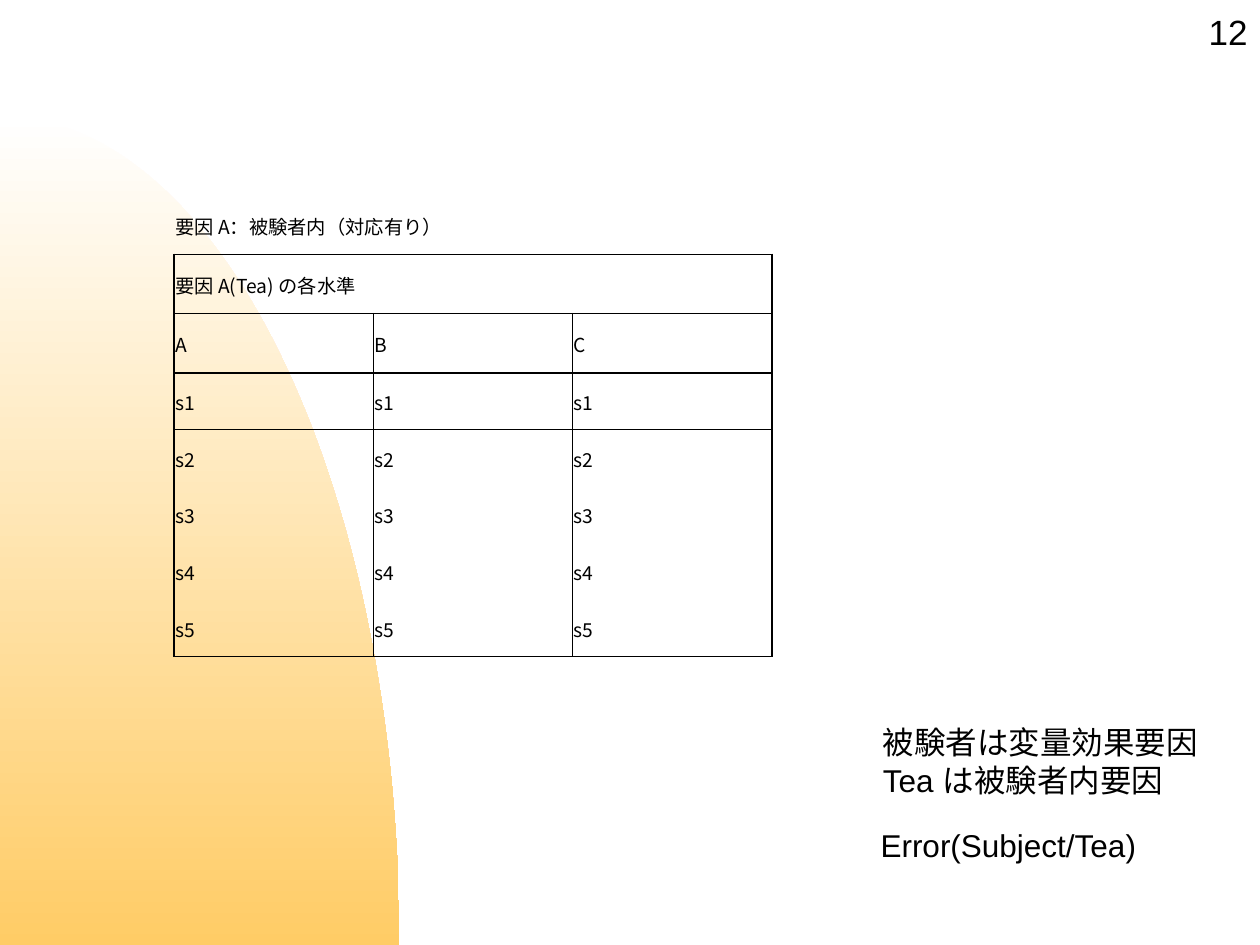
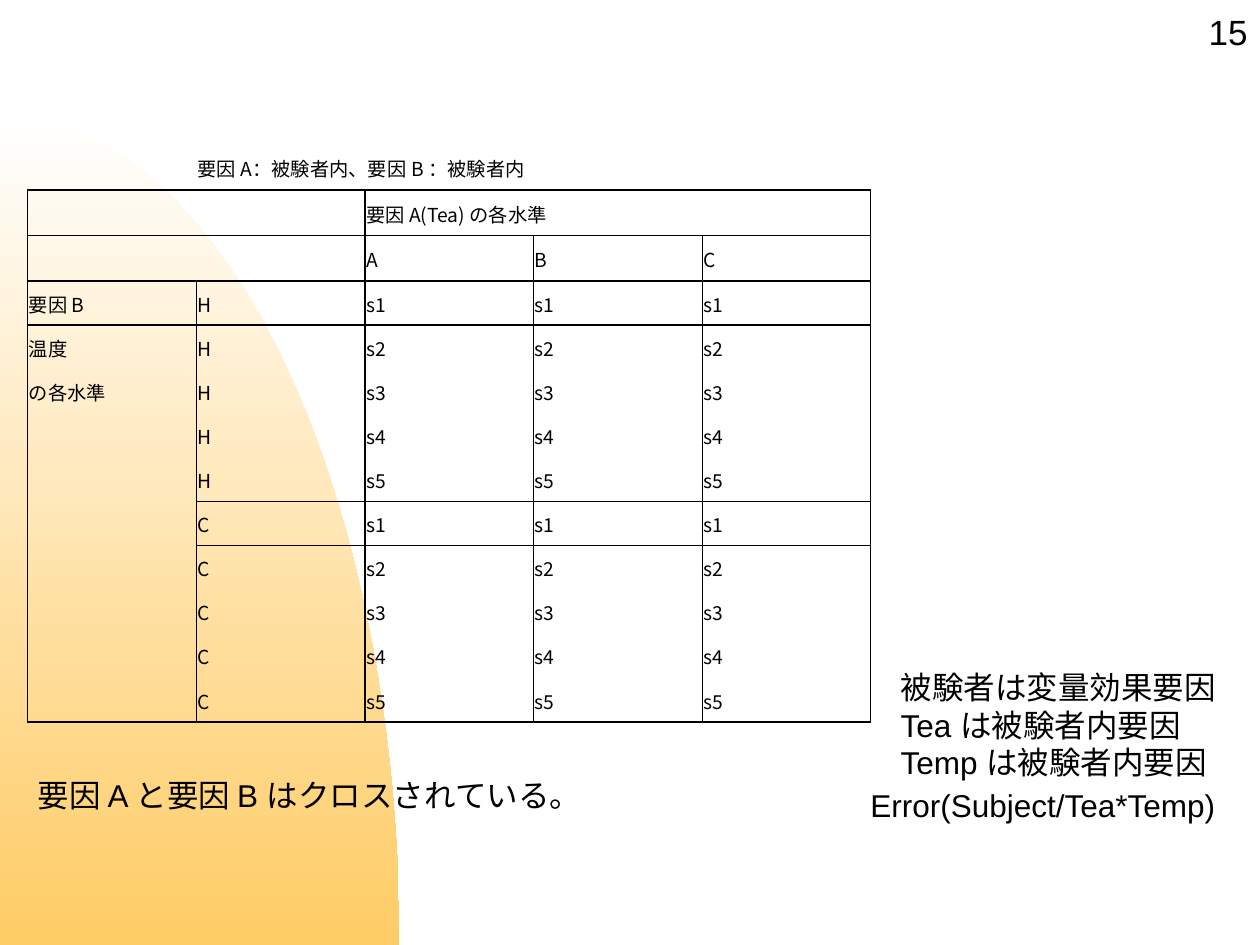
from dataclasses import dataclass
from math import cos, pi, sin

from lxml import etree
from pptx import Presentation
from pptx import util as u
from pptx.dml.color import RGBColor
from pptx.enum import text
from pptx.oxml import ns


@dataclass(frozen=True)
class Theme:
    ink: str = "000000"
    arch_top: str = "FFFFFF"
    arch_bottom: str = "FFCC66"
    font: str = "Arial"
    japanese_font: str = "Noto Sans CJK JP"
    cell_size: float = 11
    note_size: float = 18
    number_size: float = 20
    thin: float = 0.5
    thick: float = 1
    plain_table: str = "{2D5ABB26-0587-4C30-8999-92F81FD0307C}"


THEME = Theme()
COLUMNS, ROWS = 100, 75  # square grid over a 10 x 7.5 inch slide
LEVELS = ["A", "B", "C"]
SUBJECTS = [f"s{number}" for number in range(1, 6)]


def grid(units):
    """Length of a number of grid squares."""
    return u.Inches(units * 10 / COLUMNS)


def format_runs(frame, size, font):
    for para in frame.paragraphs:
        for span in para.runs:
            span.font.size = u.Pt(size)
            span.font.name = font
            span.font.color.rgb = RGBColor.from_string(THEME.ink)
            east_asian = etree.SubElement(span.font._element, ns.qn("a:ea"))
            east_asian.set("typeface", THEME.japanese_font)


# Shared background and page number

def add_arch(deck, page):
    """Draw the quarter ellipse and move it to the master, behind everything."""
    top, width, steps = 9.2, 31.7, 90
    angles = [step * pi / 2 / steps for step in range(steps + 1)]
    curve = [(grid(width * sin(angle)), grid(ROWS - (ROWS - top) * cos(angle)))
             for angle in angles]
    builder = page.shapes.build_freeform(*curve[0])
    builder.add_line_segments(curve[1:] + [(0, grid(ROWS))], close=True)
    arch = builder.convert_to_shape()
    arch.shadow.inherit = False
    arch.line.fill.background()
    arch.fill.gradient()
    arch.fill.gradient_angle = 270
    for stop, color in zip(arch.fill.gradient_stops,
                           (THEME.arch_top, THEME.arch_bottom)):
        stop.color.rgb = RGBColor.from_string(color)
    deck.slide_master.shapes.element.insert(2, arch.element)


def add_note(page, left, top, width, height, words, size=THEME.note_size):
    box = page.shapes.add_textbox(*map(grid, (left, top, width, height)))
    frame = box.text_frame
    frame.word_wrap = False
    frame.text = words
    format_runs(frame, size, THEME.font)
    return frame


def add_page_number(page, number):
    frame = add_note(page, 91.1, 0, 8.9, 5, str(number), THEME.number_size)
    frame.vertical_anchor = text.MSO_ANCHOR.MIDDLE
    frame.paragraphs[0].alignment = text.PP_ALIGN.RIGHT


# Tables

def block_edges(block, width):
    """Border widths around a block of cells: top, left, bottom, right."""
    top, left, bottom, right = block
    edges = {}
    for row in range(top, bottom + 1):
        edges[row, left, "L"] = edges[row, right, "R"] = width
    for column in range(left, right + 1):
        edges[top, column, "T"] = edges[bottom, column, "B"] = width
    return edges


def draw_borders(table, divided, outlined):
    """Thin lines round each column of a block, then thick block outlines."""
    edges = {}
    for top, left, bottom, right in divided:
        for column in range(left, right + 1):
            edges |= block_edges((top, column, bottom, column), THEME.thin)
    for block in outlined:
        edges |= block_edges(block, THEME.thick)

    for row in range(len(table.rows)):
        for column in range(len(table.columns)):
            cell = table.cell(row, column)
            properties = cell._tc.get_or_add_tcPr()
            last = column + cell.span_width - 1 if cell.is_merge_origin else column
            position = 0
            for side in "LRTB":
                width = edges.get((row, last if side == "R" else column, side))
                if width is None:
                    continue
                line = etree.Element(ns.qn(f"a:ln{side}"), w=str(u.Pt(width)))
                fill = etree.SubElement(line, ns.qn("a:solidFill"))
                etree.SubElement(fill, ns.qn("a:srgbClr"), val=THEME.ink)
                properties.insert(position, line)
                position += 1


def add_design_table(page, left, top, column_width, head_height, body_height,
                     rows, spans, divided, outlined):
    """Three heading rows, then body rows; spans are (row, first column)."""
    heights = [head_height] * 3 + [body_height] * (len(rows) - 3)
    count = len(rows[0])
    frame = page.shapes.add_table(len(rows), count, grid(left), grid(top),
                                  grid(column_width * count), grid(sum(heights)))
    table = frame.table
    table.first_row = table.horz_banding = False
    table._tbl.tblPr.find(ns.qn("a:tableStyleId")).text = THEME.plain_table
    for column in table.columns:
        column.width = grid(column_width)
    for row, height, words in zip(table.rows, heights, rows):
        row.height = grid(height)
        for cell, word in zip(row.cells, words):
            cell.fill.background()
            cell.margin_left = cell.margin_right = cell.margin_top = grid(0.1)
            cell.margin_bottom = 0
            cell.vertical_anchor = text.MSO_ANCHOR.MIDDLE
            cell.text = word
            format_runs(cell.text_frame, THEME.cell_size, THEME.japanese_font)
    for row, first in spans:
        table.cell(row, first).merge(table.cell(row, count - 1))
    draw_borders(table, divided, outlined)


# Slides

def fill_one_factor(page):
    rows = [["要因 A：被験者内（対応有り）", "", ""],
            ["要因 A(Tea) の各水準", "", ""],
            LEVELS]
    rows += [[subject] * 3 for subject in SUBJECTS]
    levels, data = (2, 0, 2, 2), (3, 0, 7, 2)
    add_design_table(page, 13.8, 15.5, 15.83, 4.7, 4.5, rows,
                     spans=[(0, 0), (1, 0)],
                     divided=[levels, data],
                     outlined=[(1, 0, 1, 2), levels, data])
    add_page_number(page, 12)
    add_note(page, 68.9, 65.1, 22.5, 4, "Error(Subject/Tea)")
    add_note(page, 69.1, 56.9, 27.3, 7.1,
             "被験者は変量効果要因\nTea は被験者内要因")


def fill_two_factors(page):
    rows = [["", "要因 A：被験者内、要因 B ：被験者内", "", "", ""],
            ["", "", "要因 A(Tea) の各水準", "", ""],
            ["", "", *LEVELS]]
    labels = ["要因 B", "温度", "の各水準"] + [""] * 7
    conditions = [(heat, subject) for heat in "HC" for subject in SUBJECTS]
    rows += [[label, heat] + [subject] * 3
             for label, (heat, subject) in zip(labels, conditions)]
    corner, heading, levels = (1, 0, 2, 1), (1, 2, 1, 4), (2, 2, 2, 4)
    factor_b, data = (3, 0, 12, 1), (3, 2, 12, 4)
    add_design_table(page, 2.2, 11.5, 13.38, 3.6, 3.5, rows,
                     spans=[(0, 1), (1, 2)],
                     divided=[levels, (3, 1, 7, 4), (8, 1, 12, 4)],
                     outlined=[corner, heading, levels, factor_b, data])
    add_page_number(page, 15)
    add_note(page, 2, 61.1, 45.8, 4, "要因 A と要因 B はクロスされている。")
    add_note(page, 68.1, 61.9, 29.6, 4, "Error(Subject/Tea*Temp)")
    add_note(page, 70.5, 52.5, 27.3, 10.1,
             "被験者は変量効果要因\nTea は被験者内要因\nTemp は被験者内要因")


def main():
    deck = Presentation()
    deck.slide_width, deck.slide_height = grid(COLUMNS), grid(ROWS)
    blank = deck.slide_layouts[6]
    pages = [deck.slides.add_slide(blank) for _ in range(2)]
    add_arch(deck, pages[0])
    fill_one_factor(pages[0])
    fill_two_factors(pages[1])
    deck.save("out.pptx")


if __name__ == "__main__":
    main()
